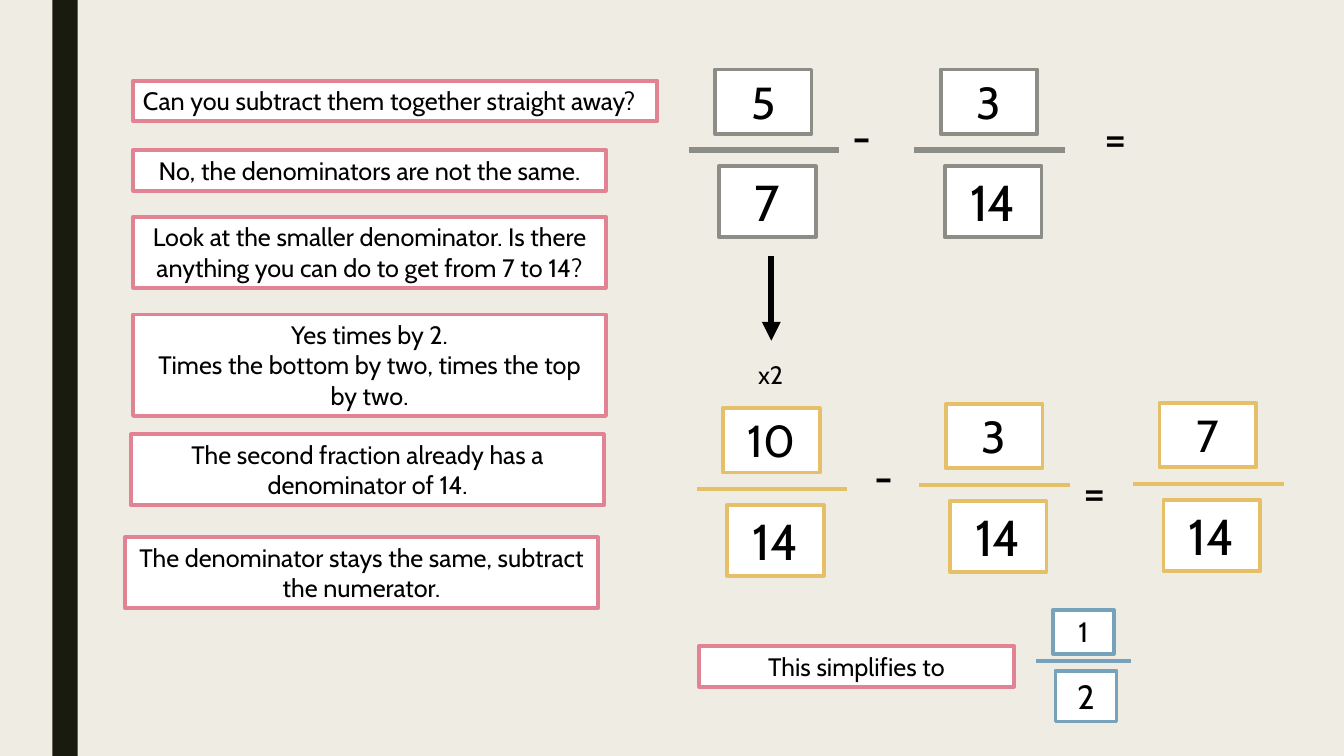
from lxml.etree import SubElement
from pptx import Presentation
from pptx.dml.color import RGBColor
from pptx.enum.shapes import MSO_CONNECTOR, MSO_SHAPE
from pptx.enum.text import MSO_ANCHOR, MSO_AUTO_SIZE, PP_ALIGN
from pptx.oxml.ns import qn
from pptx.util import Inches, Pt

COLORS = {
    "background": "EFEDE3", "band": "191B0E", "box": "FFFFFF", "text": "000000",
    "question": "8C8D86", "statement": "E28394", "working": "E6C069", "answer": "77A2BB",
}
FONT = "Cabin"
BOX_LINE = 2.75

STATEMENTS = [
    (1.32, 0.8, 5.2, "Can you subtract them together straight away?", 1),
    (1.32, 1.49, 4.69, "No, the denominators are not the same.", 1),
    (1.32, 2.15, 4.69, "Look at the smaller denominator. Is there anything you can do to get from 7 to 14?", 2),
    (1.32, 3.12, 4.69, "Yes times by 2.\nTimes the bottom by two, times the top by two.", 3),
    (1.3, 4.31, 4.69, "The second fraction already has a denominator of 14.", 2),
    (1.24, 5.33, 4.69, "The denominator stays the same, subtract the numerator.", 2),
    (6.93, 6.41, 3.13, "This simplifies to", 1),
]
FRACTIONS = [
    (6.83, 0.69, "5", "7", "question"),
    (9.07, 0.69, "3", "14", "question"),
    (6.91, 4.05, "10", "14", "working"),
    (9.12, 4.01, "3", "14", "working"),
    (11.24, 4.0, "7", "14", "working"),
]
OPERATORS = [(8.36, 1.03, "-"), (10.86, 1.04, "="), (8.57, 4.4, "-"), (10.65, 4.55, "=")]


def rgb(name):
    """Return the named palette colour."""
    return RGBColor.from_string(COLORS[name])


def text_height(size, lines=1):
    """Return the height in inches of a box fitted to its lines."""
    return 0.1 + 0.0168 * size * lines


def write(sp, text, size, align):
    """Fill a shape with text in the slide's font."""
    tf = sp.text_frame
    tf.text = text
    tf.word_wrap = True
    tf.auto_size = MSO_AUTO_SIZE.SHAPE_TO_FIT_TEXT
    tf.vertical_anchor = MSO_ANCHOR.TOP
    for p in tf.paragraphs:
        p.alignment = align
        for r in p.runs:
            r.font.name = FONT
            r.font.size = Pt(size)
            r.font.color.rgb = rgb("text")


def add_box(shapes, x, y, w, text, size, color, lines=1, align=PP_ALIGN.CENTER):
    """Draw a white box with a coloured outline and text."""
    sp = shapes.add_shape(MSO_SHAPE.RECTANGLE, Inches(x), Inches(y), Inches(w),
                          Inches(text_height(size, lines)))
    sp.shadow.inherit = False
    sp.fill.solid()
    sp.fill.fore_color.rgb = rgb("box")
    sp.line.color.rgb = rgb(color)
    sp.line.width = Pt(BOX_LINE)
    write(sp, text, size, align)
    return sp


def add_label(shapes, x, y, w, text, size):
    """Place plain text."""
    sp = shapes.add_textbox(Inches(x), Inches(y), Inches(w), Inches(text_height(size)))
    write(sp, text, size, PP_ALIGN.LEFT)


def add_line(shapes, x1, y1, x2, y2, color, width):
    """Draw a straight line without a shadow."""
    line = shapes.add_connector(MSO_CONNECTOR.STRAIGHT, Inches(x1), Inches(y1), Inches(x2), Inches(y2))
    line.line.color.rgb = rgb(color)
    line.line.width = Pt(width)
    SubElement(line._element.spPr, qn("a:effectLst"))
    return line


def add_fraction(shapes, x, y, top, bottom, color, scale=1.0, sizes=(32, 36)):
    """Group two boxes and a dividing line, measured from the given corner."""
    parts = shapes.add_group_shape().shapes
    add_box(parts, x + 0.26 * scale, y, 0.96 * scale, top, sizes[0], color)
    add_box(parts, x + 0.3 * scale, y + 0.96 * scale, 0.96 * scale, bottom, sizes[1], color)
    bar = y + 0.8 * scale
    add_line(parts, x, bar, x + 1.49 * scale, bar, color, 4.5 if color == "question" else BOX_LINE)


def add_statements(shapes):
    """Place the boxes that explain each step."""
    for x, y, w, text, lines in STATEMENTS:
        sp = add_box(shapes, x, y, w, text, 18, "statement", lines)
        if text.startswith("Can you"):
            sp.text_frame.word_wrap = False
            sp.text_frame.paragraphs[0].alignment = PP_ALIGN.LEFT


def add_calculation(shapes):
    """Place the fractions, the operators and the multiplying step."""
    for fraction in FRACTIONS:
        add_fraction(shapes, *fraction)
    add_fraction(shapes, 10.28, 6.05, "1", "2", "answer", scale=0.63, sizes=(20, 24))
    for x, y, sign in OPERATORS:
        add_label(shapes, x, y, 0.41, sign, 32)
    arrow = add_line(shapes, 7.65, 2.54, 7.65, 3.38, "text", 4.5)
    SubElement(arrow.line._get_or_add_ln(), qn("a:tailEnd"), type="triangle")
    add_label(shapes, 7.42, 3.52, 0.46, "x2", 18)


def add_backdrop(slide, height):
    """Colour the background and draw the vertical band."""
    slide.background.fill.solid()
    slide.background.fill.fore_color.rgb = rgb("background")
    band = slide.shapes.add_shape(MSO_SHAPE.RECTANGLE, Inches(0.52), 0, Inches(0.25), height)
    band.shadow.inherit = False
    band.fill.solid()
    band.fill.fore_color.rgb = rgb("band")
    band.line.fill.background()


def main():
    """Build and save the slide."""
    prs = Presentation()
    prs.slide_width, prs.slide_height = Inches(13.33), Inches(7.5)
    slide = prs.slides.add_slide(prs.slide_layouts[6])
    add_backdrop(slide, prs.slide_height)
    add_statements(slide.shapes)
    add_calculation(slide.shapes)
    prs.save("out.pptx")


if __name__ == "__main__":
    main()
